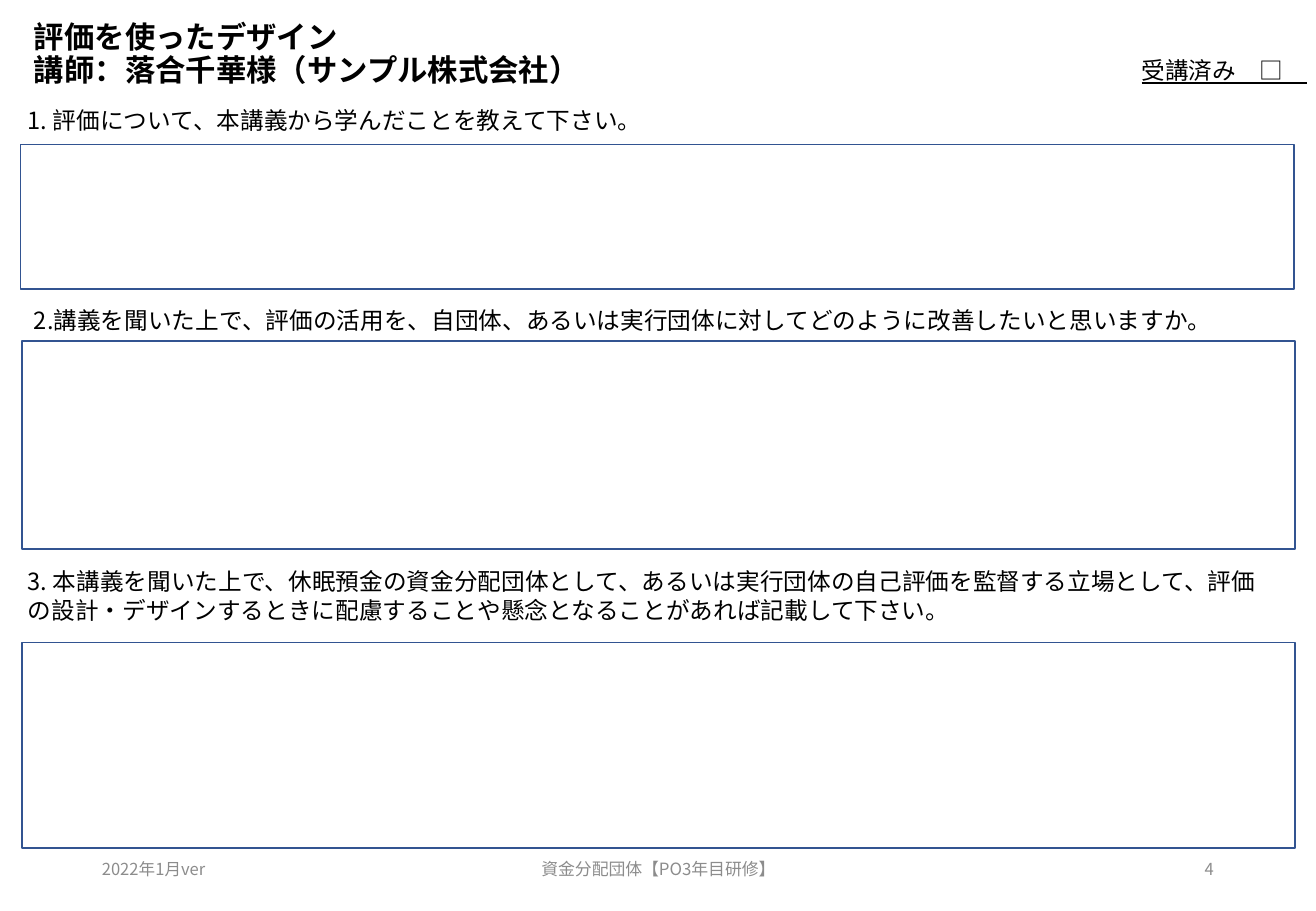
from lxml import etree
from pptx import Presentation
from pptx.dml.color import RGBColor
from pptx.enum.shapes import MSO_SHAPE
from pptx.enum.text import MSO_ANCHOR, PP_ALIGN
from pptx.oxml.ns import qn
from pptx.util import Pt

RECTANGLE = MSO_SHAPE.RECTANGLE
TOP, MIDDLE = MSO_ANCHOR.TOP, MSO_ANCHOR.MIDDLE
LEFT, CENTER, RIGHT = PP_ALIGN.LEFT, PP_ALIGN.CENTER, PP_ALIGN.RIGHT

FONT = "Noto Sans CJK JP"
COLORS = {"text": "000000", "footer": "8C8C8C", "paper": "FFFFFF", "border": "325491"}
WIDTH, HEIGHT = 780, 540
FIELD_WIDTH = 754.6

# question, its left, top and height, then its answer field's left, top and height
QUESTIONS = [
    ("1. 評価について、本講義から学んだことを教えて下さい。",
     9.4, 59, 24.5, 12.2, 85.7, 85.7),
    ("2.講義を聞いた上で、評価の活用を、自団体、あるいは実行団体に対してどのように改善したいと思いますか。",
     13, 177.8, 24.5, 13, 202.3, 123.1),
    ("3. 本講義を聞いた上で、休眠預金の資金分配団体として、あるいは実行団体の自己評価を監督する"
     "立場として、評価の設計・デザインするときに配慮することや懸念となることがあれば記載して下さい。",
     9.4, 332.6, 41, 13, 380.9, 121.7),
]

# text, left, width, size, alignment
FOOTERS = [
    ("2022年1月ver", 53.3, 175.7, 9.8, LEFT),
    ("資金分配団体【PO3年目研修】", 258.5, 263.5, 10, CENTER),
    ("4", 550.8, 175.7, 9.8, RIGHT),
]


class Worksheet:
    def __init__(self, slide):
        self.slide = slide

    def text(self, text, left, top, width, height, size=14, color="text",
             align=LEFT, anchor=TOP, bold=False, underline=False, spacing=1.0):
        box = self.slide.shapes.add_textbox(Pt(left), Pt(top), Pt(width), Pt(height))
        frame = box.text_frame
        frame.word_wrap = True
        frame.vertical_anchor = anchor
        paragraph = frame.paragraphs[0]
        paragraph.text = text
        paragraph.alignment = align
        paragraph.line_spacing = spacing
        font = paragraph.font
        font.name, font.size = FONT, Pt(size)
        font.bold, font.underline = bold, underline
        font.color.rgb = RGBColor.from_string(COLORS[color])
        latin = paragraph._p.pPr.find(qn("a:defRPr")).find(qn("a:latin"))
        east_asian = etree.Element(qn("a:ea"), typeface=FONT)
        latin.addnext(east_asian)

    def field(self, left, top, width, height):
        """Draw an empty framed area for a written answer."""
        box = self.slide.shapes.add_shape(RECTANGLE, Pt(left), Pt(top), Pt(width), Pt(height))
        box.shadow.inherit = False
        box.fill.solid()
        box.fill.fore_color.rgb = RGBColor.from_string(COLORS["paper"])
        box.line.color.rgb = RGBColor.from_string(COLORS["border"])
        box.line.width = Pt(1)


def main():
    deck = Presentation()
    deck.slide_width, deck.slide_height = Pt(WIDTH), Pt(HEIGHT)
    sheet = Worksheet(deck.slides.add_slide(deck.slide_layouts[6]))

    sheet.text("評価を使ったデザイン\v講師：落合千華様（サンプル株式会社）",
               13, -2.9, 714.2, 71.3, size=18, anchor=MIDDLE, bold=True, spacing=0.9)
    sheet.text("受講済み　□　", 669.6, 29.5, 144.7, 24.5, underline=True)

    for question, left, top, height, field_left, field_top, field_height in QUESTIONS:
        sheet.field(field_left, field_top, FIELD_WIDTH, field_height)
        sheet.text(question, left, top, FIELD_WIDTH, height)

    for text, left, width, size, align in FOOTERS:
        sheet.text(text, left, 500.4, width, 28.8, size=size, color="footer",
                   align=align, anchor=MIDDLE)

    deck.save("out.pptx")


if __name__ == "__main__":
    main()
